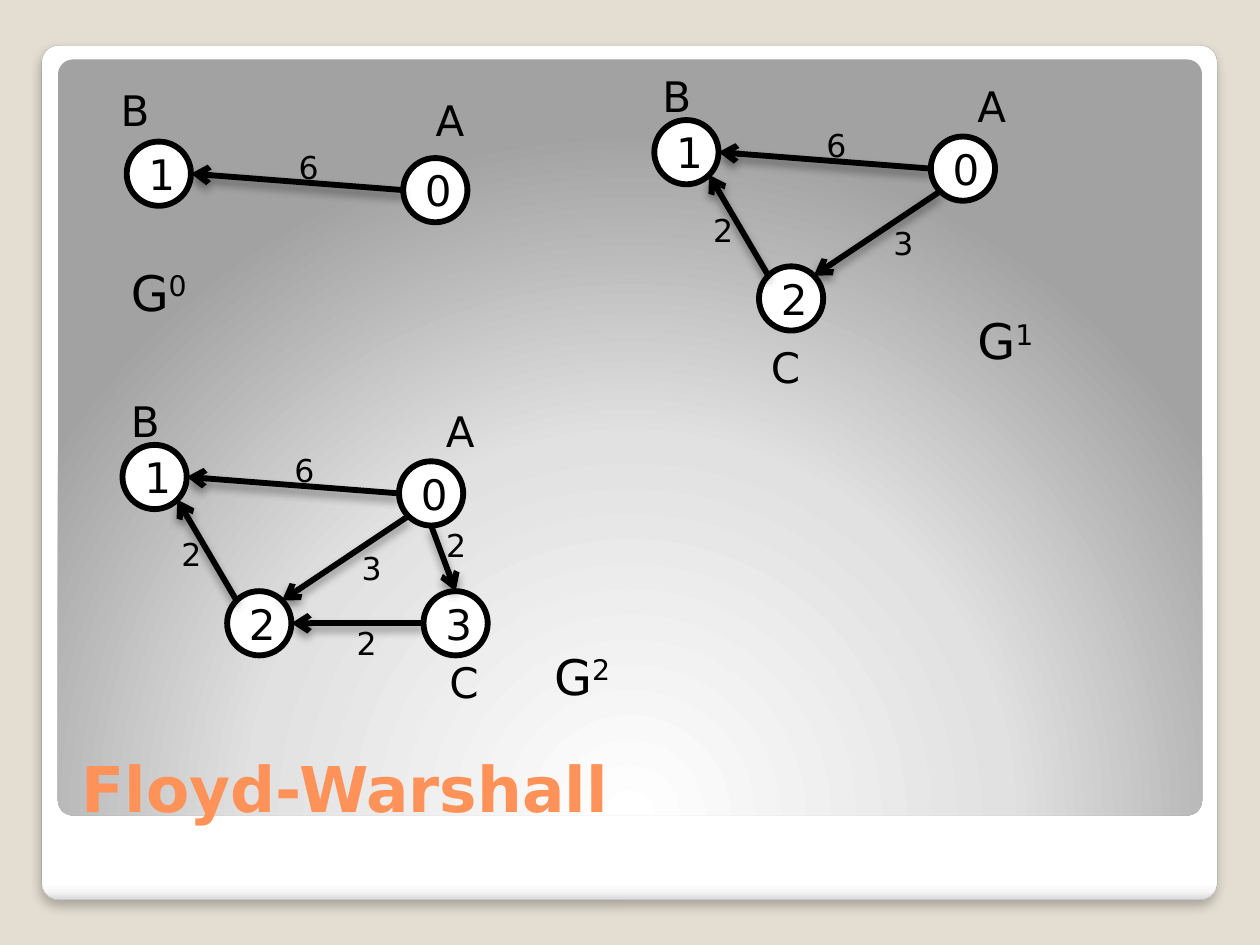
import math

import pptx
import pptx.dml.color
import pptx.enum.shapes
import pptx.enum.text
import pptx.oxml
import pptx.oxml.ns
import pptx.util
from lxml import etree

Pt = pptx.util.Pt
qn = pptx.oxml.ns.qn
SHAPE = pptx.enum.shapes.MSO_SHAPE
ALIGN = pptx.enum.text.PP_ALIGN
ANCHOR = pptx.enum.text.MSO_ANCHOR

COLORS = {
    "page": "E3DED1",
    "edge": "A4A4A4",
    "ink": "000000",
    "node": "FFFFFF",
    "title": "FF9258",
}
FONT = "DejaVu Sans"
NODE_SIZE = 36.7
STROKE = 3.35

CARDS = [
    {
        "box": (23.8, 25.9, 671.8, 488.2),
        "stops": [(0, "FFFFFF"), (98, "FFFFFF"), (99, "F7F7F7"), (100, "DADADA")],
        "direction": '<a:lin ang="5400000" scaled="0"/>',
        "outlined": True,
    },
    {
        "box": (33.1, 34, 653.8, 432),
        "stops": [(0, "FFFFFF"), (55, "E1E1E1"), (100, "A2A2A2")],
        "direction": '<a:path path="circle"><a:fillToRect l="50000" t="175000"'
                     ' r="50000" b="-75000"/></a:path>',
        "outlined": False,
    },
]

NODES = {"0": (158, 9.4), "1": (0, 0), "2": (59.8, 83.6), "3": (172, 83.6)}

# start, start angle, end, end angle, weight, weight offset
EDGES = [
    ("0", 180, "1", 0, "6", (91.2, 0)),
    ("2", 225, "1", 45, "2", (26.6, 48.2)),
    ("0", 135, "2", 315, "3", (129.6, 56)),
    ("0", 90, "3", 270, "2", (177.8, 42.6)),
    ("3", 180, "2", 0, "2", (126.7, 98.6)),
]

GRAPHS = [
    {
        "origin": (72.4, 80.9), "nodes": "01", "power": "0", "name": (67.7, 146.2),
        "letters": {"A": (241.9, 50.4), "B": (61.9, 44.6)},
    },
    {
        "origin": (373.9, 68.6), "nodes": "012", "power": "1", "name": (551.5, 174.2),
        "letters": {"A": (551.5, 42.5), "B": (371.5, 36.7), "C": (433.4, 191.5)},
    },
    {
        "origin": (70, 254.2), "nodes": "0123", "power": "2", "name": (309.6, 365.8),
        "letters": {"A": (247.7, 228.2), "B": (67.7, 222.5), "C": (249.8, 371.5)},
    },
]


def color(name):
    return pptx.dml.color.RGBColor.from_string(COLORS[name])


def style(span, size, ink="ink"):
    span.font.name = FONT
    span.font.size = Pt(size)
    span.font.color.rgb = color(ink)


def add_shadow(shape, alpha, blur, distance):
    properties = shape.element.spPr
    effects = properties.find(qn("a:effectLst"))
    if effects is None:
        effects = etree.SubElement(properties, qn("a:effectLst"))
    shadow = etree.SubElement(
        effects, qn("a:outerShdw"), blurRad=str(Pt(blur)), dist=str(Pt(distance)),
        dir="5400000", algn="t", rotWithShape="0")
    ink = etree.SubElement(shadow, qn("a:srgbClr"), val=COLORS["ink"])
    etree.SubElement(ink, qn("a:alpha"), val=str(alpha * 1000))


def add_card(page, card):
    shape = page.shapes.add_shape(SHAPE.ROUNDED_RECTANGLE, *map(Pt, card["box"]))
    shape.adjustments[0] = 0.02
    shape.shadow.inherit = False
    shape.fill.background()
    stops = "".join(
        f'<a:gs pos="{place * 1000}"><a:srgbClr val="{tone}"/></a:gs>'
        for place, tone in card["stops"])
    gradient = pptx.oxml.parse_xml(
        f'<a:gradFill {pptx.oxml.ns.nsdecls("a")} rotWithShape="1">'
        f'<a:gsLst>{stops}</a:gsLst>{card["direction"]}</a:gradFill>')
    properties = shape.element.spPr
    properties.replace(properties.find(qn("a:noFill")), gradient)
    if card["outlined"]:
        shape.line.color.rgb = color("edge")
        shape.line.width = Pt(0.16)
        add_shadow(shape, 25, 6, 4)
    else:
        shape.line.fill.background()


def add_label(page, place, extent, text, size, power="", wrap=False):
    box = page.shapes.add_textbox(*map(Pt, (*place, *extent)))
    box.text_frame.word_wrap = wrap
    box.text_frame.auto_size = pptx.enum.text.MSO_AUTO_SIZE.SHAPE_TO_FIT_TEXT
    para = box.text_frame.paragraphs[0]
    para.text = text
    if power:
        para.add_run().text = power
        para.runs[1].font._element.set("baseline", "30000")
    for span in para.runs:
        style(span, size)


def add_node(page, place, text):
    node = page.shapes.add_shape(
        SHAPE.OVAL, *map(Pt, (*place, NODE_SIZE, NODE_SIZE)))
    node.shadow.inherit = False
    node.fill.solid()
    node.fill.fore_color.rgb = color("node")
    node.line.color.rgb = color("ink")
    node.line.width = Pt(STROKE)
    node.text_frame.text = text
    node.text_frame.vertical_anchor = ANCHOR.MIDDLE
    para = node.text_frame.paragraphs[0]
    para.alignment = ALIGN.CENTER
    style(para.runs[0], 24)


def rim(place, angle):
    radius = NODE_SIZE / 2
    turn = math.radians(angle)
    return (place[0] + radius * (1 + math.cos(turn)),
            place[1] + radius * (1 + math.sin(turn)))


def add_arrow(page, start, end):
    arrow = page.shapes.add_connector(
        pptx.enum.shapes.MSO_CONNECTOR.STRAIGHT, *map(Pt, (*start, *end)))
    arrow.line.color.rgb = color("ink")
    arrow.line.width = Pt(STROKE)
    etree.SubElement(arrow.line._get_or_add_ln(), qn("a:tailEnd"), type="arrow")
    add_shadow(arrow, 40, 5.2, 3)


def add_graph(page, graph):
    left, top = graph["origin"]
    places = {key: (left + NODES[key][0], top + NODES[key][1])
              for key in graph["nodes"]}
    for key, place in places.items():
        add_node(page, place, key)
    for start, leave, end, arrive, weight, (across, down) in EDGES:
        if start in places and end in places:
            add_arrow(page, rim(places[start], leave), rim(places[end], arrive))
            add_label(page, (left + across, top + down), (19.4, 29.5),
                      weight, 18, wrap=True)
    for letter, place in graph["letters"].items():
        add_label(page, place, (31, 36), letter, 24)
    add_label(page, graph["name"], (48.2, 41), "G", 28, graph["power"])


def main():
    deck = pptx.Presentation()
    deck.slide_width, deck.slide_height = Pt(720), Pt(540)
    page = deck.slides.add_slide(deck.slide_layouts[5])
    page.background.fill.solid()
    page.background.fill.fore_color.rgb = color("page")
    for card in CARDS:
        add_card(page, card)

    title = page.shapes.title
    page.shapes.element.append(title.element)
    title.left, title.top, title.width, title.height = map(
        Pt, (39.6, 392.4, 644.4, 82.8))
    title.text_frame.text = "Floyd-Warshall"
    title.text_frame.vertical_anchor = ANCHOR.BOTTOM
    para = title.text_frame.paragraphs[0]
    para.alignment = ALIGN.LEFT
    style(para.runs[0], 36, "title")
    para.runs[0].font.bold = True

    for graph in GRAPHS:
        add_graph(page, graph)
    deck.save("out.pptx")


if __name__ == "__main__":
    main()
